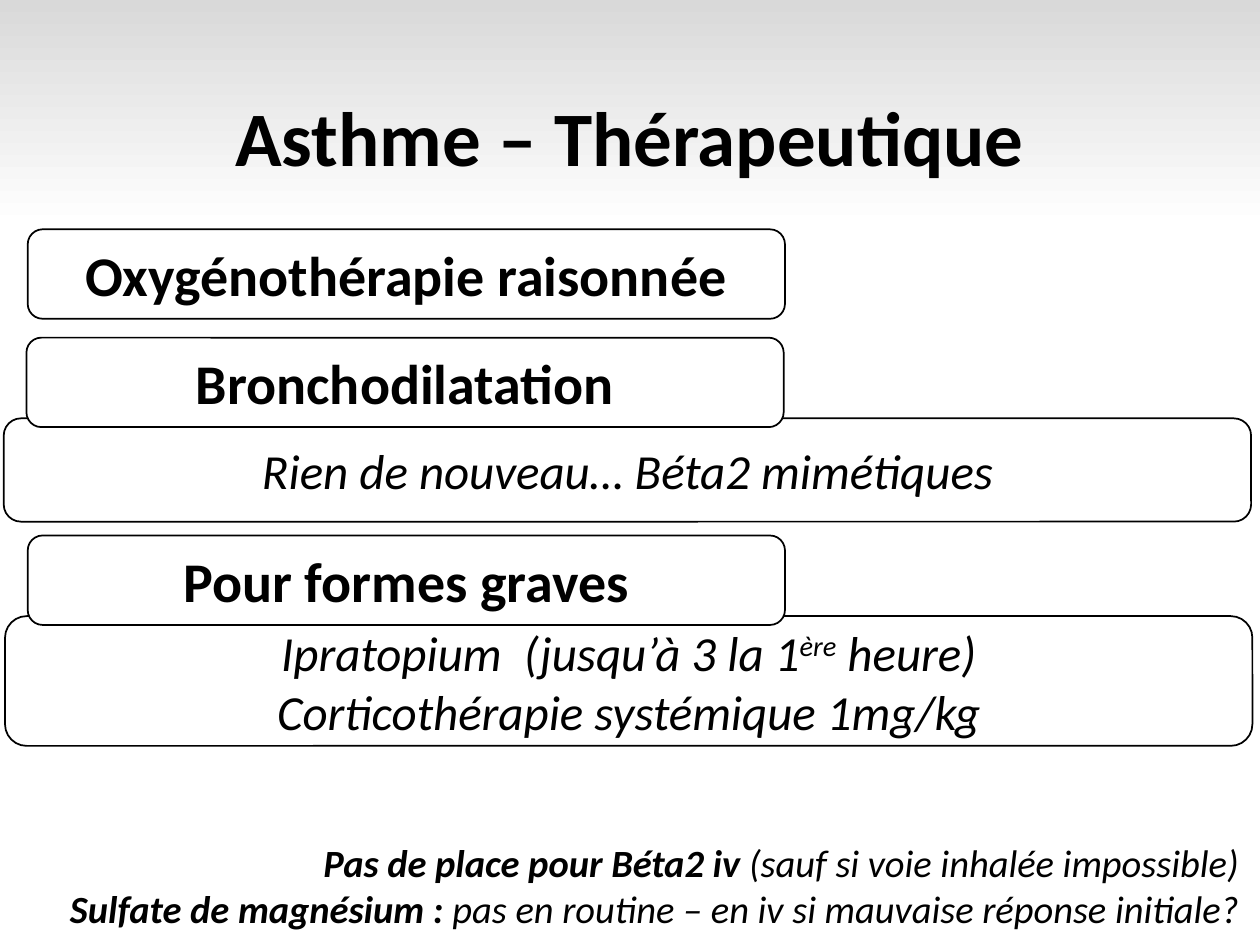
from dataclasses import dataclass

from pptx import Presentation
from pptx.dml.color import RGBColor
from pptx.enum import shapes, text
from pptx.util import Inches, Pt


@dataclass(frozen=True)
class Theme:
    """Colours, font and type sizes of the slide."""
    font: str = "Calibri"
    ink: RGBColor = RGBColor(0, 0, 0)
    paper: RGBColor = RGBColor(255, 255, 255)
    haze: RGBColor = RGBColor(0xD9, 0xD9, 0xD9)
    title: int = 44
    heading: int = 32
    detail: int = 28
    remark: int = 22


THEME = Theme()
HEADING_SIZE = (6.01, 0.71)
DETAIL_WIDTH = 9.9


def paint_background(slide):
    """Fade the top quarter of the slide from grey to white."""
    fill = slide.background.fill
    fill.gradient()
    fill.gradient_angle = 270
    for stop, color, position in zip(fill.gradient_stops, (THEME.haze, THEME.paper), (0, 0.24)):
        stop.color.rgb = color
        stop.position = position


def style_run(run, size, bold=False, italic=False):
    """Apply the theme font to one run."""
    font = run.font
    font.name, font.size = THEME.font, Pt(size)
    font.bold, font.italic = bold, italic
    font.color.rgb = THEME.ink


def write_lines(frame, lines, size, align=text.PP_ALIGN.CENTER, **style):
    """Write each line as a paragraph in one style."""
    frame.word_wrap = True
    frame.text = "\n".join(lines)
    for paragraph in frame.paragraphs:
        paragraph.alignment = align
        for run in paragraph.runs:
            style_run(run, size, **style)


def add_box(slide, left, top, width, height):
    """Add a rounded, thinly outlined box."""
    box = slide.shapes.add_shape(
        shapes.MSO_SHAPE.ROUNDED_RECTANGLE, *map(Inches, (left, top, width, height)))
    box.shadow.inherit = False
    box.line.color.rgb = THEME.ink
    box.line.width = Pt(1)
    box.text_frame.vertical_anchor = text.MSO_ANCHOR.MIDDLE
    return box


def add_heading(slide, left, top, wording):
    """Add a white box with a bold heading."""
    heading = add_box(slide, left, top, *HEADING_SIZE)
    heading.fill.solid()
    heading.fill.fore_color.rgb = THEME.paper
    write_lines(heading.text_frame, [wording], THEME.heading, bold=True)


def add_detail(slide, left, top, height, wording):
    """Add a wide unfilled box with italic text and return its paragraph."""
    detail = add_box(slide, left, top, DETAIL_WIDTH, height)
    detail.fill.background()
    write_lines(detail.text_frame, [wording], THEME.detail, italic=True)
    return detail.text_frame.paragraphs[0]


def append_run(paragraph, wording, size, **style):
    """Continue a paragraph with a styled run."""
    run = paragraph.add_run()
    run.text = wording
    style_run(run, size, **style)
    return run


def add_title(slide, wording):
    """Add the centred slide title."""
    title = slide.shapes.add_textbox(*map(Inches, (0.69, 0.4, 8.62, 1.45))).text_frame
    title.vertical_anchor = text.MSO_ANCHOR.MIDDLE
    write_lines(title, [wording], THEME.title, bold=True)
    title.paragraphs[0].line_spacing = 0.9


def add_remarks(slide, remarks):
    """Add right-aligned remarks, each a bold lead and a plain comment."""
    frame = slide.shapes.add_textbox(*map(Inches, (0.04, 6.61, 9.89, 0.84))).text_frame
    write_lines(frame, [lead for lead, _ in remarks], THEME.remark,
                text.PP_ALIGN.RIGHT, bold=True, italic=True)
    frame.auto_size = text.MSO_AUTO_SIZE.SHAPE_TO_FIT_TEXT
    for paragraph, (_, comment) in zip(frame.paragraphs, remarks):
        append_run(paragraph, comment, THEME.remark, italic=True)


def main():
    """Build and save the asthma therapy slide."""
    deck = Presentation()
    deck.slide_width, deck.slide_height = Inches(10), Inches(7.5)
    slide = deck.slides.add_slide(deck.slide_layouts[6])
    paint_background(slide)
    add_title(slide, "Asthme – Thérapeutique")

    add_detail(slide, 0.03, 3.32, 0.82, "Rien de nouveau… Béta2 mimétiques")
    add_heading(slide, 0.21, 2.68, "Bronchodilatation")
    add_heading(slide, 0.22, 1.82, "Oxygénothérapie raisonnée")

    severe = add_detail(slide, 0.04, 4.89, 1.03, "Ipratopium  (jusqu’à 3 la 1")
    ordinal = append_run(severe, "ère", THEME.detail, italic=True)
    ordinal.font._element.set("baseline", "30000")
    append_run(severe, " heure)", THEME.detail, italic=True)
    severe.add_line_break()
    append_run(severe, "Corticothérapie systémique 1mg/kg", THEME.detail, italic=True)
    add_heading(slide, 0.22, 4.25, "Pour formes graves")

    add_remarks(slide, [
        ("Pas de place pour Béta2 iv ", "(sauf si voie inhalée impossible)"),
        ("Sulfate de magnésium : ", "pas en routine – en iv si mauvaise réponse initiale?"),
    ])
    deck.save("out.pptx")


if __name__ == "__main__":
    main()
